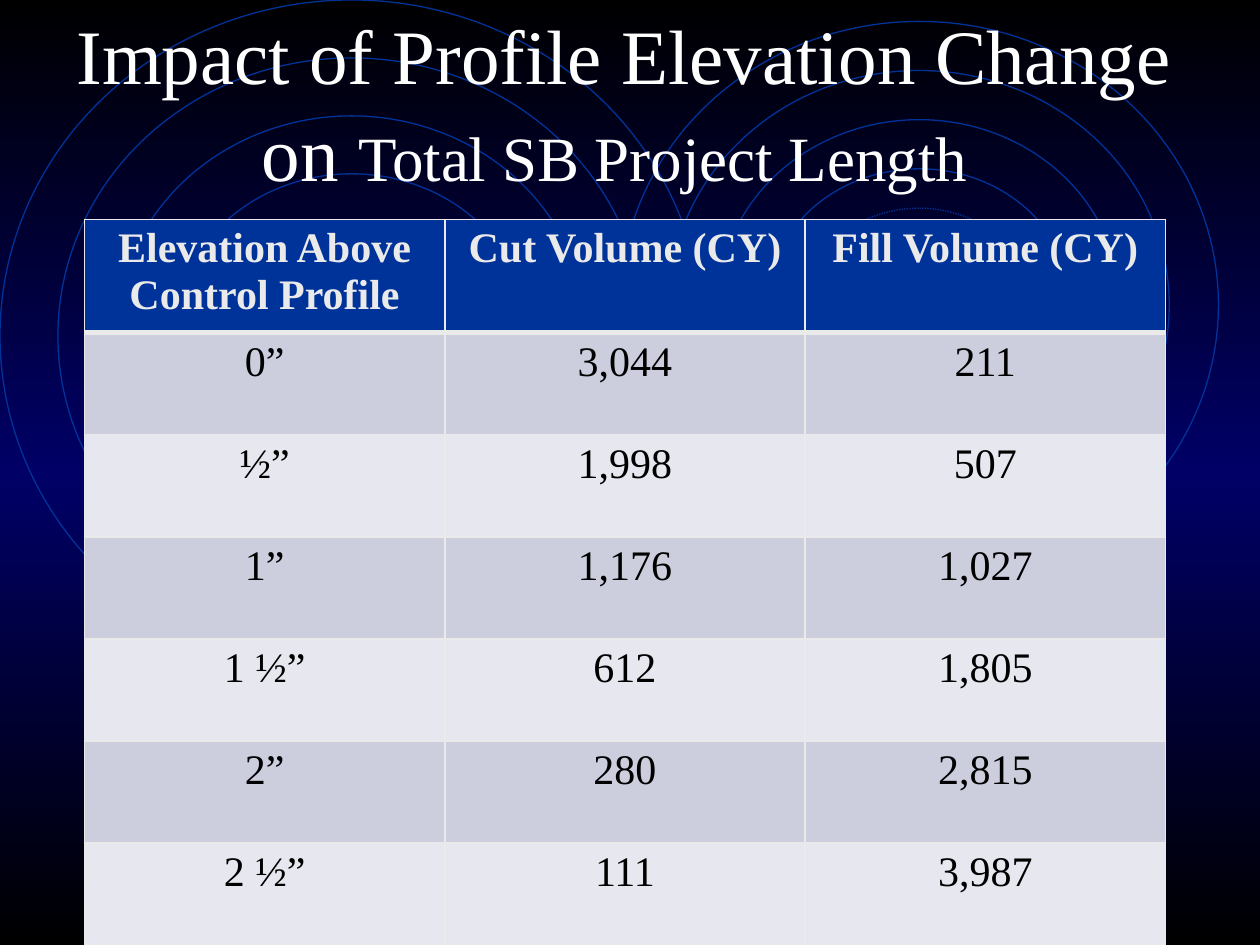
from copy import deepcopy
from dataclasses import dataclass

from lxml.etree import SubElement
from pptx import Presentation
from pptx.dml.color import RGBColor
from pptx.enum.dml import MSO_LINE_DASH_STYLE as Dash
from pptx.enum.shapes import MSO_SHAPE as Shape
from pptx.enum.text import MSO_ANCHOR as Anchor, PP_ALIGN as Align
from pptx.oxml.ns import qn
from pptx.util import Inches, Pt

COLORS = {
    "black": "000000",
    "navy": "000066",
    "blue": "003399",
    "white": "FFFFFF",
    "pale": "EAEAEA",
    "band_dark": "CCCEDE",
    "band_light": "E7E8EF",
}
FONT = "Times New Roman"
RING_STEPS = (0, 1, 2, 3, 3.8)
HEADER = ("Elevation Above Control Profile", "Cut Volume (CY)", "Fill Volume (CY)")
VOLUMES = (
    ("0”", "3,044", "211"),
    ("½”", "1,998", "507"),
    ("1”", "1,176", "1,027"),
    ("1 ½”", "612", "1,805"),
    ("2”", "280", "2,815"),
    ("2 ½”", "111", "3,987"),
)


@dataclass
class Ripple:
    left: float
    top: float
    width: float
    height: float
    step: float


RIPPLES = (
    Ripple(0, 0, 5.58, 5.33, 0.46),
    Ripple(3.5, 3.5, 4.25, 4, 0.35),
    Ripple(4.92, 0.17, 4.75, 4.5, 0.39),
)


def rgb(name: str) -> RGBColor:
    return RGBColor.from_string(COLORS[name])


def add_text(paragraph, text: str, *, size: float, color: str, bold: bool = False) -> None:
    paragraph.alignment = Align.CENTER
    run = paragraph.add_run()
    run.text = text
    run.font.name = FONT
    run.font.size = Pt(size)
    run.font.bold = bold
    run.font.color.rgb = rgb(color)


def paint_background(slide) -> None:
    fill = slide.background.fill
    fill.gradient()
    fill.gradient_angle = 270
    stop_list = next(slide.element.iter(qn("a:gsLst")))
    stop_list.append(deepcopy(stop_list[0]))
    for stop, position, color in zip(fill.gradient_stops, (0, 0.5, 1), ("black", "navy", "black")):
        stop.position = position
        stop.color.rgb = rgb(color)


def draw_ripple(slide, ripple: Ripple) -> None:
    for ring_step in RING_STEPS:
        inset = ring_step * ripple.step
        ring = slide.shapes.add_shape(
            Shape.OVAL,
            Inches(ripple.left + inset),
            Inches(ripple.top + inset),
            Inches(ripple.width - 2 * inset),
            Inches(ripple.height - 2 * inset),
        )
        ring.shadow.inherit = False
        ring.fill.background()
        ring.line.color.rgb = rgb("blue")
        ring.line.width = Pt(0.75)
        if ring_step == RING_STEPS[-1]:
            ring.line.dash_style = Dash.ROUND_DOT


def draw_title(slide) -> None:
    title = slide.shapes.add_textbox(Inches(0.33), Inches(0.17), Inches(9.25), Inches(1.25))
    frame = title.text_frame
    frame.word_wrap = True
    frame.vertical_anchor = Anchor.MIDDLE
    heading = frame.paragraphs[0]
    heading.line_spacing = 1.05
    add_text(heading, "Impact of Profile Elevation Change", size=44, color="white")
    heading.add_line_break()
    add_text(heading, "on ", size=44, color="white")
    add_text(heading, "Total SB Project Length", size=36, color="white")
    add_text(heading, " ", size=44, color="white")


def set_borders(cell, *, top: float = 1, bottom: float = 1) -> None:
    properties = cell._tc.get_or_add_tcPr()
    for side, width in (("L", 1), ("R", 1), ("T", top), ("B", bottom)):
        line = SubElement(properties, qn(f"a:ln{side}"), w=str(Pt(width)))
        solid = SubElement(line, qn("a:solidFill"))
        SubElement(solid, qn("a:srgbClr"), val=COLORS["pale"])


def draw_volume_table(slide) -> None:
    rows = (HEADER, *VOLUMES)
    row_height = Inches(0.81)
    table = slide.shapes.add_table(
        len(rows), len(HEADER), Inches(0.67), Inches(1.74), Inches(8.58), row_height * len(rows)
    ).table
    for row_index, values in enumerate(rows):
        table.rows[row_index].height = row_height
        is_header = row_index == 0
        band = "blue" if is_header else "band_dark" if row_index % 2 else "band_light"
        for column_index, value in enumerate(values):
            cell = table.cell(row_index, column_index)
            set_borders(cell, top=3 if row_index == 1 else 1, bottom=3 if is_header else 1)
            cell.fill.solid()
            cell.fill.fore_color.rgb = rgb(band)
            add_text(
                cell.text_frame.paragraphs[0],
                value,
                size=24,
                color="pale" if is_header else "black",
                bold=is_header,
            )


def main() -> None:
    """Build the slide on cut and fill volumes by profile elevation."""
    deck = Presentation()
    deck.slide_width, deck.slide_height = Inches(10), Inches(7.5)
    slide = deck.slides.add_slide(deck.slide_layouts[6])
    paint_background(slide)
    for ripple in RIPPLES:
        draw_ripple(slide, ripple)
    draw_title(slide)
    draw_volume_table(slide)
    deck.save("out.pptx")


if __name__ == "__main__":
    main()
